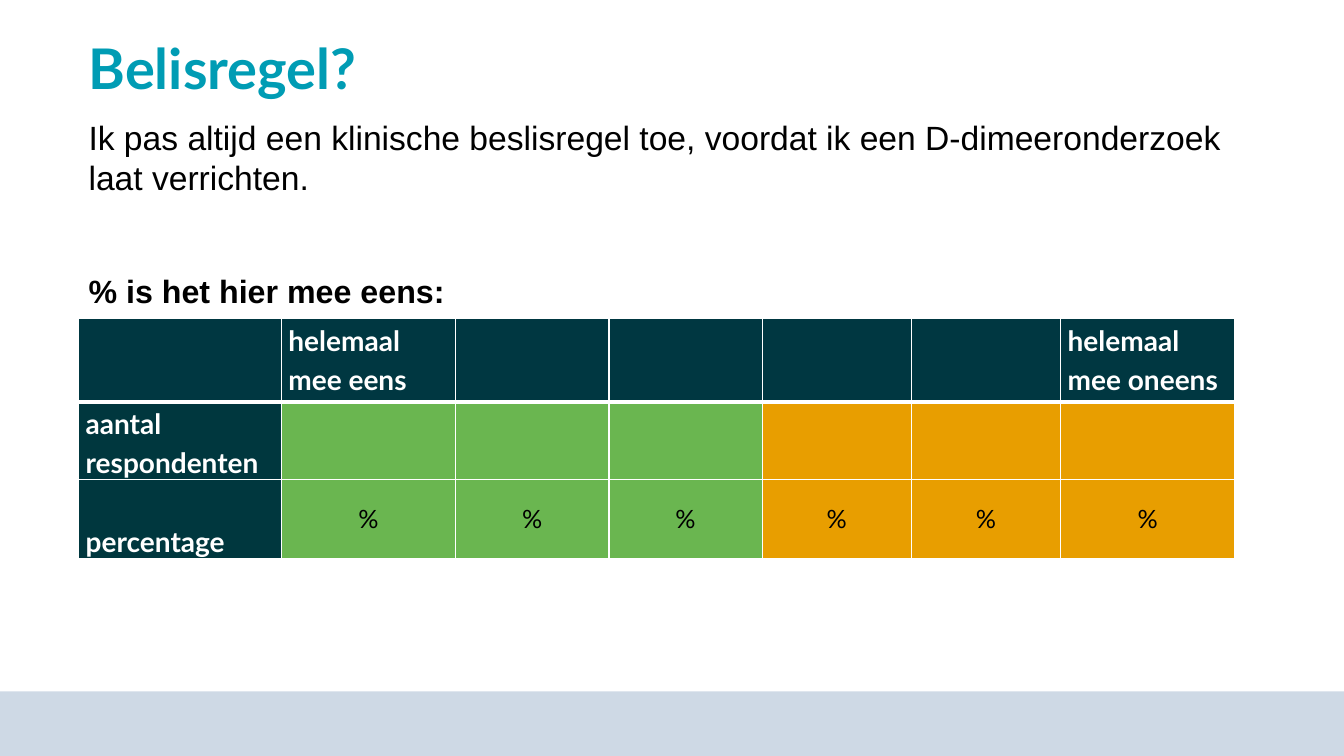
from lxml.etree import SubElement
from pptx import Presentation
from pptx.dml.color import RGBColor
from pptx.enum.shapes import MSO_SHAPE
from pptx.enum.text import MSO_ANCHOR as ANCHOR, PP_ALIGN as ALIGN
from pptx.oxml.ns import qn
from pptx.util import Inches, Pt

TEAL = RGBColor(0x00, 0x9C, 0xB4)
PETROL = RGBColor(0x00, 0x37, 0x41)
DARK_PETROL = RGBColor(0x00, 0x37, 0x3E)
GREEN = RGBColor(0x6A, 0xB6, 0x50)
ORANGE = RGBColor(0xE8, 0x9E, 0x00)
PALE_BLUE = RGBColor(0xCE, 0xD9, 0xE5)
WHITE = RGBColor(0xFF, 0xFF, 0xFF)
BLACK = RGBColor(0x00, 0x00, 0x00)


def write(paragraph, text, size, color=BLACK, font="Lato", bold=False,
          align=ALIGN.LEFT, spacing=1.0, before=0):
    paragraph.alignment = align
    paragraph.line_spacing = spacing
    paragraph.space_before = Pt(before)
    run = paragraph.add_run()
    run.text = text
    run.font.name = font
    run.font.size = Pt(size)
    run.font.bold = bold
    run.font.color.rgb = color


def add_borders(cell, **widths):
    """Draw white borders; the sides come in schema order L, R, T, B."""
    properties = cell._tc.get_or_add_tcPr()
    for position, (side, width) in enumerate(widths.items()):
        line = SubElement(properties, qn(f"a:ln{side}"), w=str(Pt(width)))
        fill = SubElement(line, qn("a:solidFill"))
        SubElement(fill, qn("a:srgbClr"), val=str(WHITE))
        properties.insert(position, line)


prs = Presentation()
prs.slide_width = Inches(13.33)
prs.slide_height = Inches(7.5)
slide = prs.slides.add_slide(prs.slide_layouts[6])

footer = slide.shapes.add_shape(
    MSO_SHAPE.RECTANGLE, 0, Inches(6.86), prs.slide_width, Inches(0.64))
footer.shadow.inherit = False
footer.fill.solid()
footer.fill.fore_color.rgb = PALE_BLUE
footer.line.fill.background()

title = slide.shapes.add_textbox(
    Inches(0.78), Inches(0.36), Inches(10.68), Inches(0.71)).text_frame
title.word_wrap = True
write(title.paragraphs[0], "Belisregel?", 40, TEAL, bold=True, spacing=0.9)

statement = slide.shapes.add_textbox(
    Inches(0.78), Inches(1.08), Inches(11.89), Inches(2.07)).text_frame
statement.word_wrap = True
statement.vertical_anchor = ANCHOR.MIDDLE
write(statement.paragraphs[0],
      "Ik pas altijd een klinische beslisregel toe, voordat ik een "
      "D-dimeeronderzoek laat verrichten.", 24, font="Arial")
write(statement.add_paragraph(), "% is het hier mee eens:", 23,
      font="Arial", bold=True, before=53)

column_widths = [2.01, 1.73, 1.52, 1.52, 1.48, 1.48, 1.73]
row_heights = [0.83, 0.71, 0.78]
answers = [
    ["", "helemaal mee eens", "", "", "", "", "helemaal mee oneens"],
    ["aantal\nrespondenten"] + [""] * 6,
    ["percentage"] + ["%"] * 6,
]
table = slide.shapes.add_table(
    len(row_heights), len(column_widths), Inches(0.78), Inches(3.16),
    Inches(sum(column_widths)), Inches(sum(row_heights))).table
table.horz_banding = False
for column, width in zip(table.columns, column_widths):
    column.width = Inches(width)
for row, height in zip(table.rows, row_heights):
    row.height = Inches(height)

for r, texts in enumerate(answers):
    for c, text in enumerate(texts):
        cell = table.cell(r, c)
        is_label = r == 0 or c == 0
        cell.margin_left = cell.margin_right = Inches(0.07)
        cell.margin_top = cell.margin_bottom = 0
        cell.fill.solid()
        if r == 0:
            cell.fill.fore_color.rgb = PETROL
        elif c == 0:
            cell.fill.fore_color.rgb = DARK_PETROL
        else:
            cell.fill.fore_color.rgb = GREEN if c <= 3 else ORANGE
        add_borders(cell, L=1, R=1, T=3 if r == 1 else 1, B=3 if r == 0 else 1)
        if not is_label:
            cell.vertical_anchor = ANCHOR.MIDDLE
        elif text == "percentage":
            cell.vertical_anchor = ANCHOR.BOTTOM
        if not text:
            continue
        for i, line in enumerate(text.split("\n")):
            frame = cell.text_frame
            paragraph = frame.add_paragraph() if i else frame.paragraphs[0]
            if is_label:
                write(paragraph, line, 20, WHITE, bold=True, spacing=1.15)
            else:
                write(paragraph, line, 18, align=ALIGN.CENTER)

prs.save("out.pptx")
